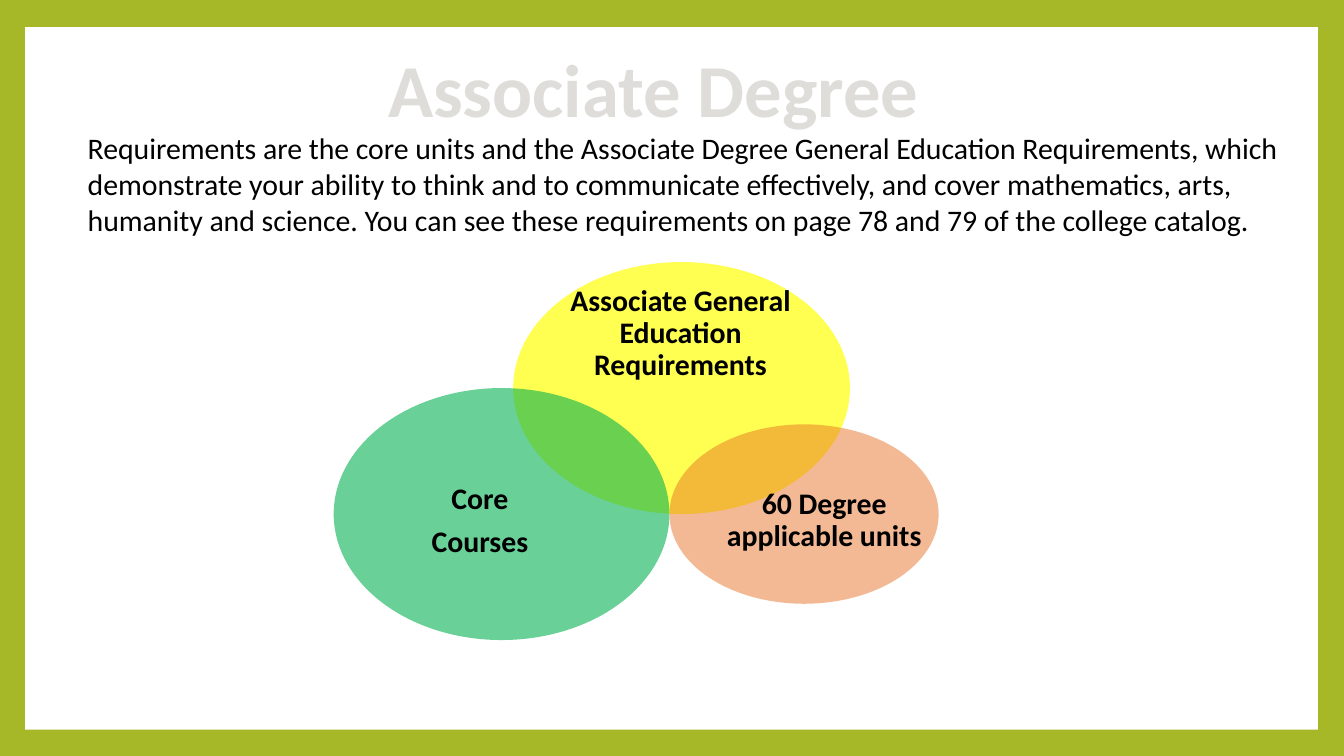
from pptx import Presentation
from pptx.dml.color import RGBColor
from pptx.enum.shapes import MSO_SHAPE as Shape
from pptx.enum.text import MSO_ANCHOR as Anchor, MSO_AUTO_SIZE as AutoSize, PP_ALIGN as Align
from pptx.oxml.ns import qn
from pptx.util import Inches, Pt
from lxml.etree import SubElement

FONT = "Calibri"
TEXT_SIZE = 21.3
COLORS = {
    "border": "A6B727",
    "panel": "FFFFFF",
    "title": "DEDDDA",
    "text": "000000",
    "general": "FFFF00",
    "core": "00B050",
    "units": "E6681A",
}
INTRO = (
    "Requirements are the core units and the Associate Degree General Education "
    "Requirements, which demonstrate your ability to think and to communicate "
    "effectively, and cover mathematics, arts, humanity and science. You can see "
    "these requirements on page 78 and 79 of the college catalog."
)
CIRCLES = [
    ("general", 68, (1.78, 0, 3.34, 2.5), (2.22, 0.23, 2.44, 0.98),
     ["Associate General Education Requirements"]),
    ("core", 59, (0, 1.25, 3.33, 2.5), (0.49, 2.2, 1.92, 0.75),
     ["Core", "Courses"]),
    ("units", 46, (3.33, 1.61, 2.67, 1.78), (3.73, 2.25, 2.27, 0.65),
     ["60 Degree applicable units"]),
]


def color(name):
    return RGBColor.from_string(COLORS[name])


def place(shape, box):
    shape.left, shape.top, shape.width, shape.height = map(Inches, box)


def set_text(shape, lines, size, color_name, bold, align, spacing=1.0, after=0):
    frame = shape.text_frame
    frame.text = "\n".join(lines)
    frame.word_wrap = True
    frame.auto_size = AutoSize.NONE
    frame.margin_left = frame.margin_right = 0
    frame.margin_top = frame.margin_bottom = 0
    frame.vertical_anchor = Anchor.TOP
    for paragraph in frame.paragraphs:
        paragraph.alignment = align
        paragraph.line_spacing = spacing
        paragraph.space_before = Pt(0)
        paragraph.space_after = Pt(after)
        for run in paragraph.runs:
            run.font.name = FONT
            run.font.size = Pt(size)
            run.font.bold = bold
            run.font.color.rgb = color(color_name)


def add_filled_shape(slide, kind, box, color_name, opacity=100):
    shape = slide.shapes.add_shape(kind, *map(Inches, box))
    shape.shadow.inherit = False
    shape.line.fill.background()
    shape.fill.solid()
    shape.fill.fore_color.rgb = color(color_name)
    if opacity < 100:
        fill_color = shape.element.spPr.find(".//" + qn("a:srgbClr"))
        SubElement(fill_color, qn("a:alpha"), val=str(opacity * 1000))
    return shape


def add_frame(slide, box):
    slide.background.fill.solid()
    slide.background.fill.fore_color.rgb = color("border")
    panel = add_filled_shape(slide, Shape.RECTANGLE, box, "panel")
    slide.shapes.title.element.addprevious(panel.element)


def fill_title(slide, box):
    title = slide.shapes.title
    place(title, box)
    set_text(title, ["Associate Degree"], 53.3, "title", True, Align.CENTER)


def fill_intro(slide, box):
    body = slide.placeholders[1]
    place(body, box)
    set_text(body, [INTRO], TEXT_SIZE, "text", False, Align.LEFT)
    properties = body.text_frame.paragraphs[0]._p.get_or_add_pPr()
    properties.set("marL", "0")
    properties.set("indent", "0")
    SubElement(properties, qn("a:buNone"))


def add_venn(slide, left, top):
    def offset(box):
        x, y, width, height = box
        return left + x, top + y, width, height

    for name, opacity, oval_box, label_box, lines in CIRCLES:
        add_filled_shape(slide, Shape.OVAL, offset(oval_box), name, opacity)
        label = slide.shapes.add_textbox(*map(Inches, offset(label_box)))
        set_text(label, lines, TEXT_SIZE, "text", True, Align.CENTER, 0.9, 7.5)


def main():
    presentation = Presentation()
    presentation.slide_width = Inches(13.33)
    presentation.slide_height = Inches(7.5)
    slide = presentation.slides.add_slide(presentation.slide_layouts[1])
    add_frame(slide, (0.25, 0.27, 12.82, 6.97))
    fill_title(slide, (0.87, 0.43, 11.22, 0.91))
    fill_intro(slide, (0.87, 1.29, 12.17, 1.1))
    add_venn(slide, 3.31, 2.6)
    presentation.save("out.pptx")


if __name__ == "__main__":
    main()
